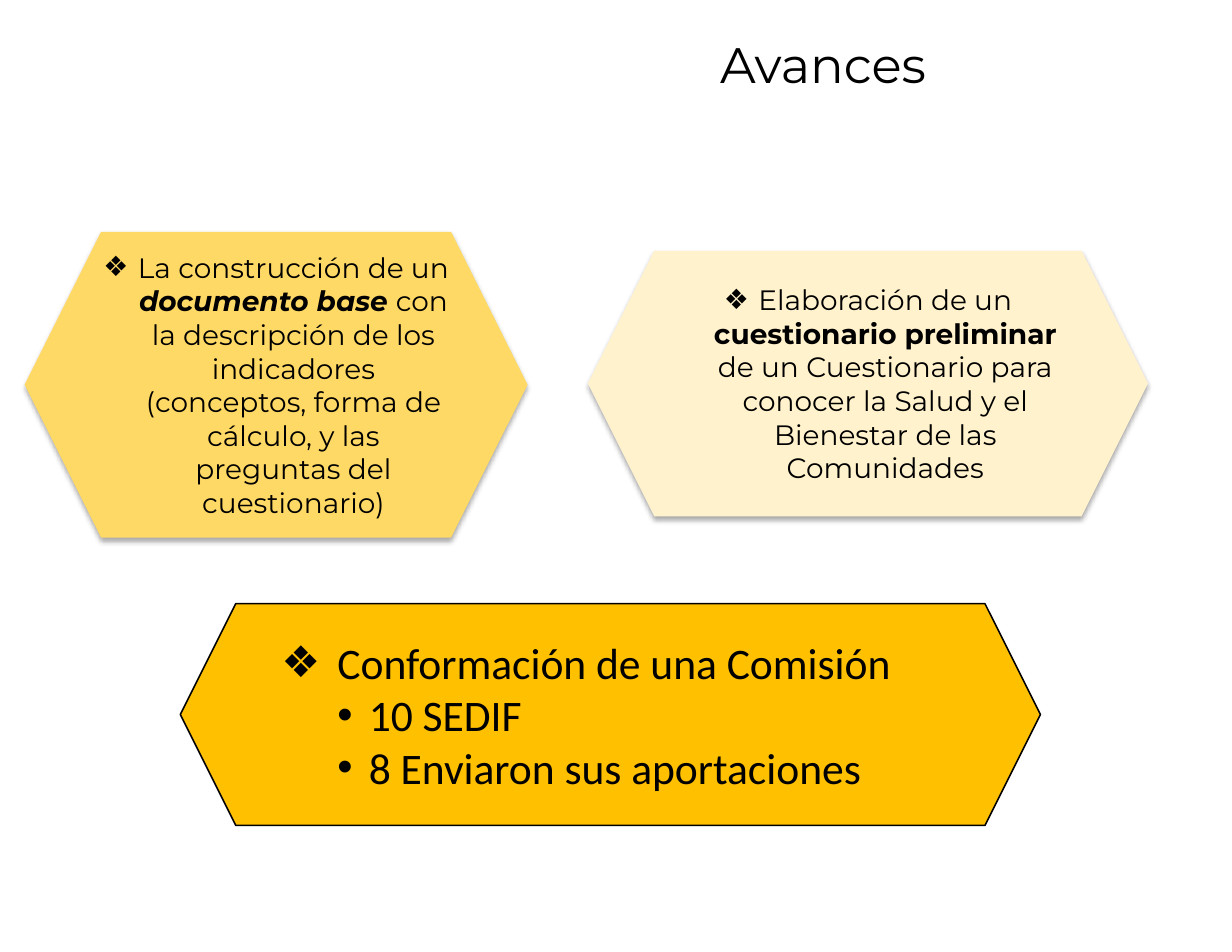
from lxml import etree
from pptx import Presentation
from pptx.dml.color import RGBColor
from pptx.enum.shapes import MSO_SHAPE
from pptx.enum.text import MSO_ANCHOR, PP_ALIGN
from pptx.oxml.ns import qn
from pptx.util import Inches, Pt

HEXAGON = MSO_SHAPE.HEXAGON
MIDDLE = MSO_ANCHOR.MIDDLE
LEFT, CENTER = PP_ALIGN.LEFT, PP_ALIGN.CENTER

BLACK = RGBColor(0x00, 0x00, 0x00)
WHITE = RGBColor(0xFF, 0xFF, 0xFF)
AMBER = RGBColor(0xFF, 0xC0, 0x00)
GOLD = RGBColor(0xFF, 0xD9, 0x66)
CREAM = RGBColor(0xFF, 0xF2, 0xCC)

SANS, BODY = "Montserrat", "Calibri"


def write(para, text, font=SANS, size=18, bold=False, italic=False):
    run = para.add_run()
    run.text = text
    run.font.name = font
    run.font.size = Pt(size)
    run.font.bold = bold
    run.font.italic = italic
    run.font.color.rgb = BLACK


def add_bullet(para, char, indent, hang, tab=False):
    props = para._p.get_or_add_pPr()
    props.set("marL", str(Inches(indent)))
    props.set("indent", str(-Inches(hang)))
    etree.SubElement(props, qn("a:buFont"), typeface="Arial")
    etree.SubElement(props, qn("a:buChar"), char=char)
    if tab:
        stops = etree.SubElement(props, qn("a:tabLst"))
        etree.SubElement(stops, qn("a:tab"), pos=str(Inches(indent)), algn="l")


def add_shadow(shape):
    effects = shape._element.spPr.find(qn("a:effectLst"))
    outer = etree.SubElement(
        effects, qn("a:outerShdw"), blurRad=str(Pt(3.5)), dist=str(Pt(2.2)),
        dir="5400000", algn="t", rotWithShape="0")
    color = etree.SubElement(outer, qn("a:srgbClr"), val=str(BLACK))
    etree.SubElement(color, qn("a:alpha"), val="32000")


def add_hexagon(slide, box, fill):
    shape = slide.shapes.add_shape(HEXAGON, *map(Inches, box))
    shape.shadow.inherit = False
    shape.fill.solid()
    shape.fill.fore_color.rgb = fill
    shape.line.fill.background()
    shape.text_frame.word_wrap = True
    shape.text_frame.vertical_anchor = MIDDLE
    return shape


def add_title(slide, box, text):
    title = slide.shapes.title
    title.left, title.top, title.width, title.height = map(Inches, box)
    title.fill.solid()
    title.fill.fore_color.rgb = WHITE
    title.text_frame.vertical_anchor = MIDDLE
    para = title.text_frame.paragraphs[0]
    para.alignment = CENTER
    write(para, text, size=32)


def add_group(slide, box, head, items):
    """Outlined hexagon with a heading and its list."""
    shape = add_hexagon(slide, box, AMBER)
    shape.line.color.rgb = BLACK
    shape.line.width = Pt(1)
    frame = shape.text_frame
    para = frame.paragraphs[0]
    para.alignment = LEFT
    add_bullet(para, "❖", 0.5, 0.5)
    write(para, head, font=BODY, size=28)
    for item in items:
        para = frame.add_paragraph()
        para.alignment = LEFT
        para.level = 1
        add_bullet(para, "•", 0.78, 0.28, tab=True)
        write(para, item, font=BODY, size=28)


def add_step(slide, box, fill, start, key, rest, italic=False):
    """Shadowed hexagon with one sentence and a bold key phrase."""
    shape = add_hexagon(slide, box, fill)
    add_shadow(shape)
    para = shape.text_frame.paragraphs[0]
    para.alignment = CENTER
    add_bullet(para, "❖", 0.31, 0.31)
    write(para, start)
    write(para, key, bold=True, italic=italic)
    write(para, rest)


def main():
    deck = Presentation()
    deck.slide_width, deck.slide_height = Inches(11), Inches(8.5)
    slide = deck.slides.add_slide(deck.slide_layouts[5])

    add_title(slide, (5.8, 0.23, 3.1, 0.68), "Avances")

    # Commission
    add_group(slide, (1.61, 5.39, 7.68, 1.98), "Conformación de una Comisión",
              ["10 SEDIF", "8 Enviaron sus aportaciones"])

    # Questionnaire and base document
    add_step(slide, (5.25, 2.24, 5, 2.37), CREAM,
             "Elaboración de un ", "cuestionario preliminar ",
             "de un Cuestionario para conocer la Salud y el Bienestar "
             "de las Comunidades")
    add_step(slide, (0.22, 2.07, 4.49, 2.73), GOLD,
             "La construcción de un ", "documento base ",
             "con la descripción de los indicadores (conceptos, forma de "
             "cálculo, y las preguntas del cuestionario)", italic=True)

    deck.save("out.pptx")


if __name__ == "__main__":
    main()
